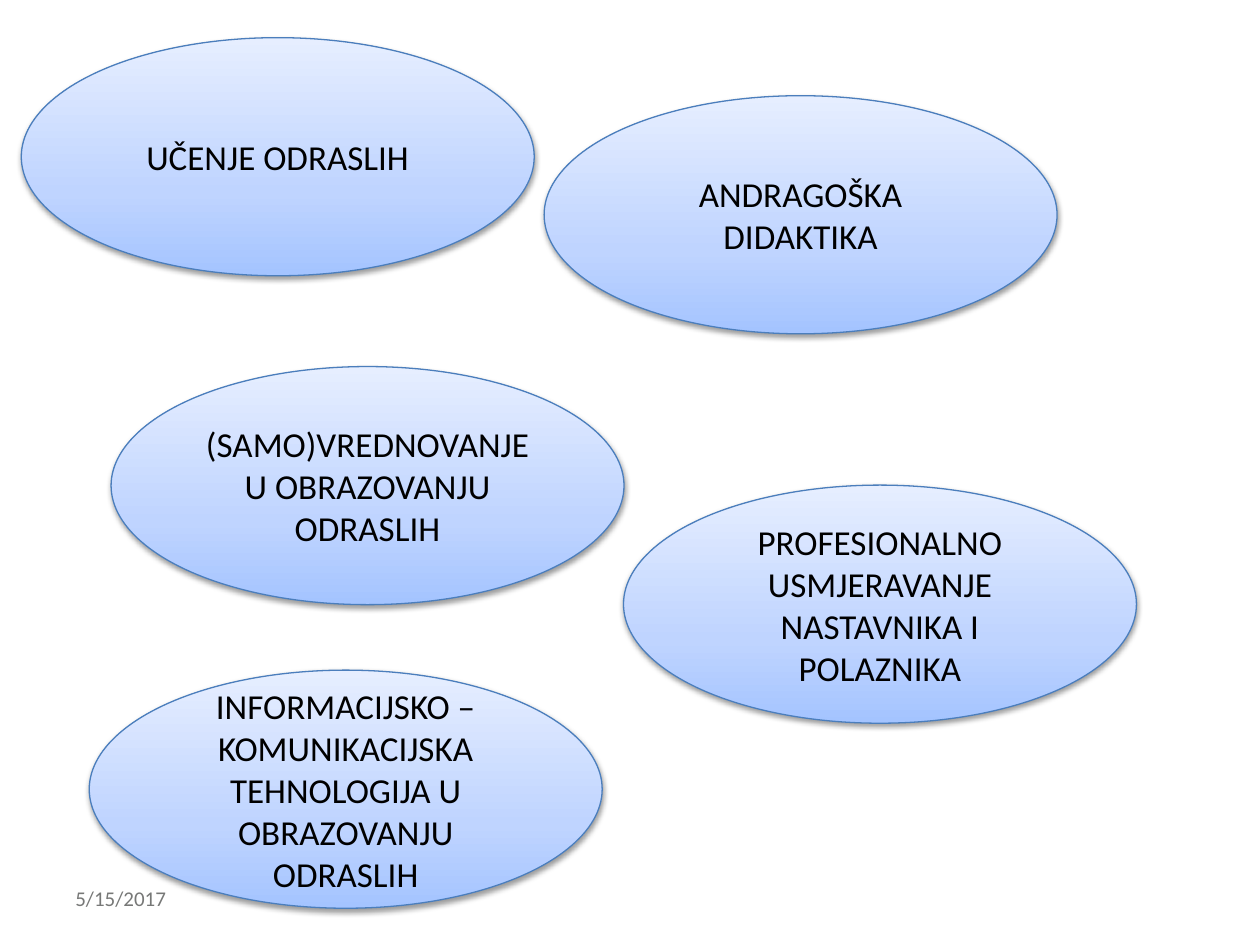
from lxml import etree
from pptx import Presentation
from pptx.dml.color import RGBColor
from pptx.enum.shapes import MSO_SHAPE
from pptx.enum.text import MSO_ANCHOR, PP_ALIGN
from pptx.oxml.ns import qn
from pptx.util import Cm, Pt

ELLIPSE = MSO_SHAPE.OVAL
TOP, MIDDLE = MSO_ANCHOR.TOP, MSO_ANCHOR.MIDDLE
LEFT, CENTER = PP_ALIGN.LEFT, PP_ALIGN.CENTER
BLANK_LAYOUT = 6

COLORS = {
    "text": "000000",
    "date": "777877",
    "outline": "4B7EBC",
    "shadow": "000000",
    "bottom": "A4C4FF",
    "middle": "BFD4FF",
    "top": "E6EEFF",
}
GRADIENT = [(0, "bottom"), (35, "middle"), (100, "top")]

TOPIC_SIZE = (10.34, 4.8)
TOPICS = [
    ("UČENJE ODRASLIH", 0.43, 0.76),
    ("ANDRAGOŠKA DIDAKTIKA", 10.97, 1.93),
    ("(SAMO)VREDNOVANJE U OBRAZOVANJU ODRASLIH", 2.24, 7.39),
    ("PROFESIONALNO USMJERAVANJE NASTAVNIKA I POLAZNIKA", 12.57, 9.78),
    ("INFORMACIJSKO – KOMUNIKACIJSKA TEHNOLOGIJA U OBRAZOVANJU ODRASLIH", 1.8, 13.51),
]


def write_text(tf, text, size=20, color="text", font="Calibri", align=CENTER, anchor=MIDDLE):
    tf.word_wrap = True
    tf.vertical_anchor = anchor
    p = tf.paragraphs[0]
    p.alignment = align
    r = p.add_run()
    r.text = text
    r.font.name = font
    r.font.size = Pt(size)
    r.font.color.rgb = RGBColor.from_string(COLORS[color])


def add_color(parent, color):
    return etree.SubElement(parent, qn("a:srgbClr"), val=COLORS[color])


class SlideBuilder:
    def __init__(self, s):
        self.s = s

    def date(self, text, x, y, w, h):
        box = self.s.shapes.add_textbox(Cm(x), Cm(y), Cm(w), Cm(h))
        write_text(box.text_frame, text, size=12, color="date", align=LEFT, anchor=TOP)

    def topic(self, text, x, y):
        w, h = TOPIC_SIZE
        sp = self.s.shapes.add_shape(ELLIPSE, Cm(x), Cm(y), Cm(w), Cm(h))
        sp.line.color.rgb = RGBColor.from_string(COLORS["outline"])
        sp.line.width = Pt(0.75)
        self.shade(sp)
        self.cast_shadow(sp)
        write_text(sp.text_frame, text)

    def shade(self, sp):
        sp.fill.gradient()
        sp.fill.gradient_angle = 90
        stops = sp.element.spPr.find(qn("a:gradFill")).find(qn("a:gsLst"))
        for stop in list(stops):
            stops.remove(stop)
        for percent, color in GRADIENT:
            add_color(etree.SubElement(stops, qn("a:gs"), pos=str(percent * 1000)), color)

    def cast_shadow(self, sp):
        sp.shadow.inherit = False
        effects = sp.element.spPr.find(qn("a:effectLst"))
        shadow = etree.SubElement(
            effects, qn("a:outerShdw"), blurRad=str(Pt(3.1)), dist=str(Pt(1.6)),
            dir="5400000", rotWithShape="0",
        )
        etree.SubElement(add_color(shadow, "shadow"), qn("a:alpha"), val="38000")


def main():
    prs = Presentation()
    prs.slide_width, prs.slide_height = Cm(25.4), Cm(19.05)
    builder = SlideBuilder(prs.slides.add_slide(prs.slide_layouts[BLANK_LAYOUT]))
    builder.date("5/15/2017", 1.27, 17.73, 5.92, 1.02)
    for text, x, y in TOPICS:
        builder.topic(text, x, y)
    prs.save("out.pptx")


if __name__ == "__main__":
    main()
